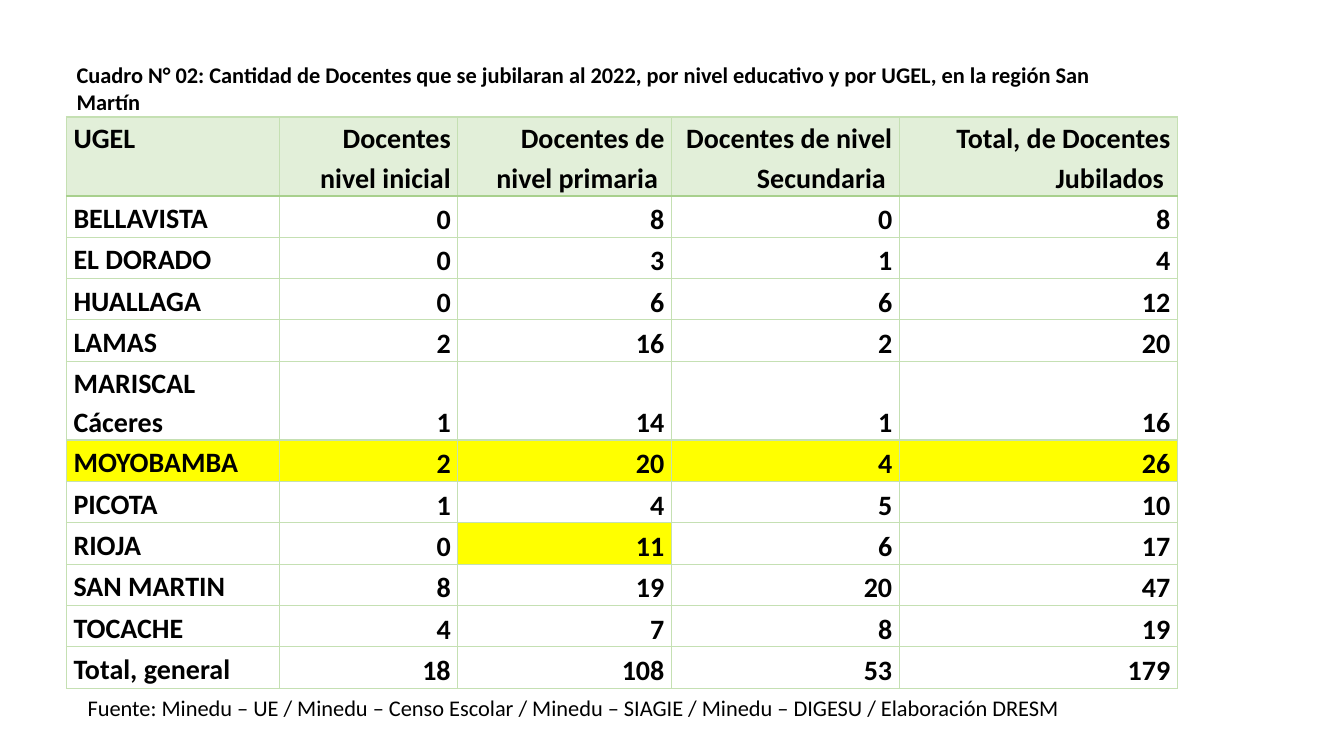
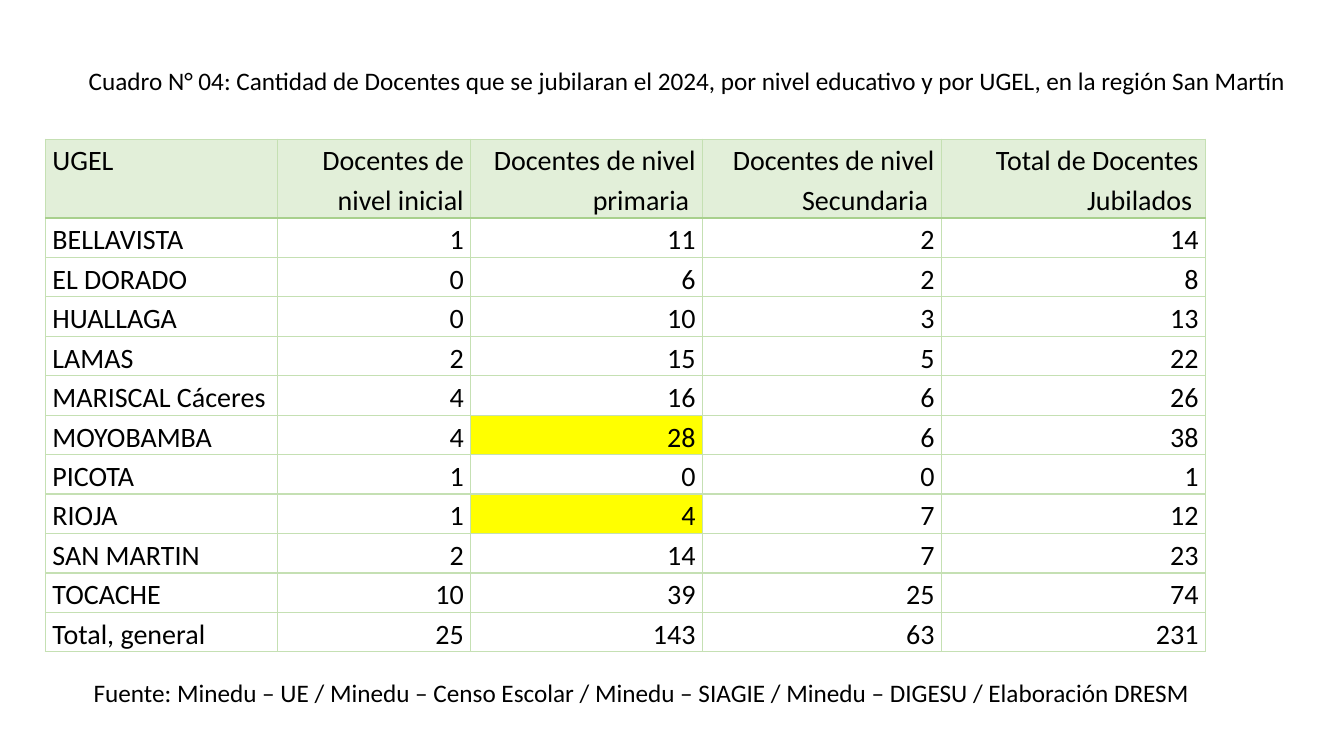
"""Build two slides with tables of retiring teachers by level and UGEL."""
import pptx
import pptx.dml.color
import pptx.enum.text
import pptx.oxml
import pptx.oxml.ns
import pptx.util

COLORS = {"ink": "000000", "header": "E2EFD9", "mark": "FFFF00", "grid": "C5E0B3", "rule": "A8D08D"}
FONT = "Calibri"
TABLE_SIZE = 20
LINE_SPACING = 1.15
CELL_MARGIN = 0.52
TITLE_ONLY = 5
ALIGN = pptx.enum.text.PP_ALIGN
ANCHOR = pptx.enum.text.MSO_ANCHOR
SOURCE = "Fuente: Minedu – UE / Minedu – Censo Escolar / Minedu – SIAGIE / Minedu – DIGESU / Elaboración DRESM"
UGELS = ["BELLAVISTA", "EL DORADO", "HUALLAGA", "LAMAS", "MARISCAL Cáceres", "MOYOBAMBA",
         "PICOTA", "RIOJA", "SAN MARTIN", "TOCACHE", "Total, general"]

SLIDES = [
    {
        "caption": "Cuadro N° 02: Cantidad de Docentes que se jubilaran al 2022, por nivel educativo y por UGEL, en la región San Martín",
        "caption_at": (4.95, 7.6, 80.78, 8),
        "source_at": (5.78, 91.2, 89.63, 4.93),
        "text_size": 16,
        "bold": True,
        "table_at": (4.95, 15.47),
        "columns": [15.83, 13.28, 15.9, 16.95, 20.7],
        "row": 5.47,
        "tall_row": 10.4,
        "tall": {0, 5},
        "header": ["UGEL", "Docentes nivel inicial", "Docentes de nivel primaria ",
                   "Docentes de nivel Secundaria ", "Total, de Docentes Jubilados "],
        "values": [(0, 8, 0, 8), (0, 3, 1, 4), (0, 6, 6, 12), (2, 16, 2, 20), (1, 14, 1, 16),
                   (2, 20, 4, 26), (1, 4, 5, 10), (0, 11, 6, 17), (8, 19, 20, 47), (4, 7, 8, 19),
                   (18, 108, 53, 179)],
        "marked": {(6, column) for column in range(5)} | {(8, 2)},
    },
    {
        "caption": "Cuadro N° 04: Cantidad de Docentes que se jubilaran el 2024, por nivel educativo y por UGEL, en la región San Martín",
        "caption_at": (5.85, 8, 92, 5.33),
        "source_at": (6.23, 88.93, 85.58, 5.33),
        "text_size": 18,
        "bold": False,
        "table_at": (3.38, 18.4),
        "columns": [17.25, 14.4, 17.25, 17.78, 19.65],
        "row": 5.2,
        "tall_row": 10.4,
        "tall": {0},
        "header": ["UGEL", "Docentes de nivel inicial", "Docentes de nivel primaria ",
                   "Docentes de nivel Secundaria ", "Total de Docentes Jubilados "],
        "values": [(1, 11, 2, 14), (0, 6, 2, 8), (0, 10, 3, 13), (2, 15, 5, 22), (4, 16, 6, 26),
                   (4, 28, 6, 38), (1, 0, 0, 1), (1, 4, 7, 12), (2, 14, 7, 23), (10, 39, 25, 74),
                   (25, 143, 63, 231)],
        "marked": {(6, 2), (8, 2)},
    },
]

deck = pptx.Presentation()
deck.slide_width = pptx.util.Inches(13.33)
deck.slide_height = pptx.util.Inches(7.5)


def share(*percents):
    """Turn alternating width and height percentages into lengths."""
    sides = (deck.slide_width, deck.slide_height)
    return [int(sides[index % 2] * percent / 100) for index, percent in enumerate(percents)]


def write(frame, text, size, bold, align, anchor):
    """Put one formatted paragraph into a text frame."""
    frame.text = text
    frame.word_wrap = True
    frame.vertical_anchor = anchor
    para = frame.paragraphs[0]
    para.alignment = align
    for span in para.runs:
        span.font.name = FONT
        span.font.size = pptx.util.Pt(size)
        span.font.bold = bold
        span.font.color.rgb = pptx.dml.color.RGBColor.from_string(COLORS["ink"])
    return para


for content in SLIDES:
    page = deck.slides.add_slide(deck.slide_layouts[TITLE_ONLY])
    title = page.shapes.title
    title.left, title.top, title.width, title.height = share(*content["caption_at"])
    write(title.text_frame, content["caption"], content["text_size"], content["bold"], ALIGN.LEFT, ANCHOR.MIDDLE)
    title.text_frame.auto_size = pptx.enum.text.MSO_AUTO_SIZE.NONE

    rows = [content["header"]] + [[ugel, *values] for ugel, values in zip(UGELS, content["values"])]
    heights = [content["tall_row" if index in content["tall"] else "row"] for index in range(len(rows))]
    frame_at = share(*content["table_at"], sum(content["columns"]), sum(heights))
    table = page.shapes.add_table(len(rows), len(content["columns"]), *frame_at).table
    table.horz_banding = False
    for column, width in zip(table.columns, content["columns"]):
        column.width = share(width)[0]
    for row, height in zip(table.rows, heights):
        row.height = share(0, height)[1]

    for row_index, row in enumerate(rows):
        for column_index, value in enumerate(row):
            cell = table.cell(row_index, column_index)
            cell.margin_left = cell.margin_right = share(CELL_MARGIN)[0]
            cell.margin_top = cell.margin_bottom = 0
            align = ALIGN.RIGHT if column_index else ALIGN.LEFT
            anchor = ANCHOR.TOP if row_index == 0 else ANCHOR.BOTTOM if column_index else ANCHOR.MIDDLE
            para = write(cell.text_frame, str(value), TABLE_SIZE, content["bold"], align, anchor)
            para.line_spacing = LINE_SPACING
            cell.vertical_anchor = anchor

            for side in ("L", "R", "T", "B"):
                under_header = (row_index, side) in {(0, "B"), (1, "T")}
                color, points = (COLORS["rule"], 1.5) if under_header else (COLORS["grid"], 1)
                cell._tc.get_or_add_tcPr().append(pptx.oxml.parse_xml(
                    f'<a:ln{side} {pptx.oxml.ns.nsdecls("a")} w="{pptx.util.Pt(points)}">'
                    f'<a:solidFill><a:srgbClr val="{color}"/></a:solidFill></a:ln{side}>'))

            fill = "header" if row_index == 0 else "mark" if (row_index, column_index) in content["marked"] else None
            if fill:
                cell.fill.solid()
                cell.fill.fore_color.rgb = pptx.dml.color.RGBColor.from_string(COLORS[fill])
            else:
                cell.fill.background()

    box = page.shapes.add_textbox(*share(*content["source_at"]))
    write(box.text_frame, SOURCE, content["text_size"], False, ALIGN.LEFT, ANCHOR.TOP)

deck.save("out.pptx")
